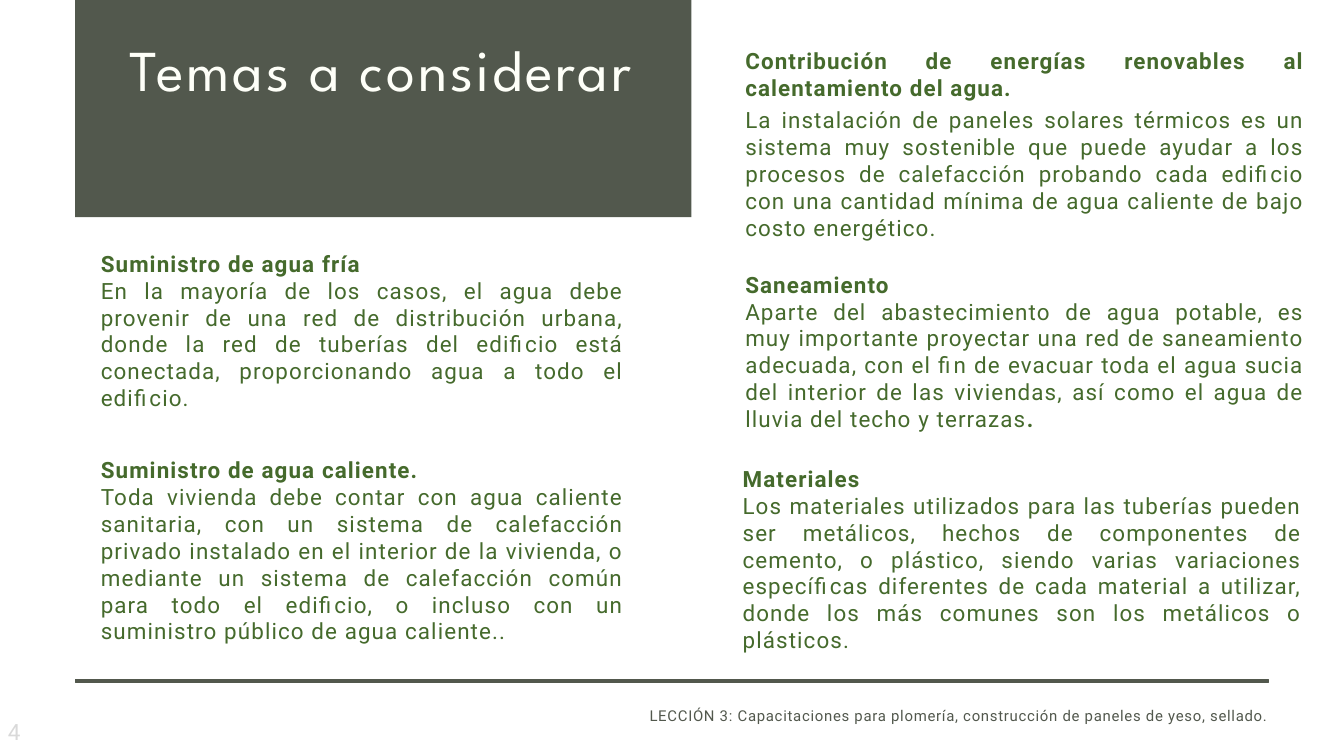
"""Builds the lesson slide on topics to consider in plumbing."""
from pptx import Presentation
from pptx.dml.color import RGBColor
from pptx.enum.shapes import MSO_SHAPE
from pptx.enum.text import MSO_ANCHOR, MSO_AUTO_SIZE, PP_ALIGN
from pptx.util import Cm, Pt

OLIVE = RGBColor(0x52, 0x58, 0x4D)
GREEN = RGBColor(0x45, 0x6A, 0x2C)
IVORY = RGBColor(0xFE, 0xFF, 0xF8)
GREY = RGBColor(0xD9, 0xD9, 0xD9)
RECTANGLE = MSO_SHAPE.RECTANGLE
TOP, MIDDLE = MSO_ANCHOR.TOP, MSO_ANCHOR.MIDDLE
LEFT, RIGHT, JUSTIFY = PP_ALIGN.LEFT, PP_ALIGN.RIGHT, PP_ALIGN.JUSTIFY
NO_FIT = MSO_AUTO_SIZE.NONE
TITLE_ONLY = 5

TOPICS = [
    ((28.17, 1.78, 21.13, 7.39), 6,
     "Contribución de energías renovables al calentamiento del agua.",
     "La instalación de paneles solares térmicos es un sistema muy sostenible que puede ayudar "
     "a los procesos de calefacción probando cada edificio con una cantidad mínima de agua "
     "caliente de bajo costo energético.", ""),
    ((28.17, 10.24, 21.13, 6.15), 0,
     "Saneamiento",
     "Aparte del abastecimiento de agua potable, es muy importante proyectar una red de "
     "saneamiento adecuada, con el fin de evacuar toda el agua sucia del interior de las "
     "viviendas, así como el agua de lluvia del techo y terrazas", "."),
    ((3.81, 9.45, 19.76, 6.15), 0,
     "Suministro de agua fría",
     "En la mayoría de los casos, el agua debe provenir de una red de distribución urbana, "
     "donde la red de tuberías del edificio está conectada, proporcionando agua a todo el "
     "edificio.", ""),
    ((3.81, 17.25, 19.76, 7.19), 0,
     "Suministro de agua caliente.",
     "Toda vivienda debe contar con agua caliente sanitaria, con un sistema de calefacción "
     "privado instalado en el interior de la vivienda, o mediante un sistema de calefacción "
     "común para todo el edificio, o incluso con un suministro público de agua caliente..", ""),
    ((28.07, 17.58, 21.13, 6.15), 0,
     "Materiales",
     "Los materiales utilizados para las tuberías pueden ser metálicos, hechos de componentes "
     "de cemento, o plástico, siendo varias variaciones específicas diferentes de cada material "
     "a utilizar, donde los más comunes son los metálicos o plásticos.", ""),
]


class SlideWriter:
    """Holds the text style and the current slide."""

    body_font = "Roboto"
    title_font = "League Spartan"
    body_size = 24

    def __init__(self, page):
        self.page = page

    def frame(self, box, anchor=TOP, margins=(0, 0)):
        side, edge = (Cm(margin) for margin in margins)
        settings = {
            "word_wrap": True, "auto_size": NO_FIT, "vertical_anchor": anchor,
            "margin_left": side, "margin_right": side,
            "margin_top": edge, "margin_bottom": edge,
        }
        for name, value in settings.items():
            setattr(box.text_frame, name, value)
        return box.text_frame

    def paragraph(self, para, spans, color, size=body_size, font=body_font, tracking=1.2, **layout):
        for name, value in layout.items():
            setattr(para, name, value)
        for text, bold in spans:
            span = para.add_run()
            span.text = text
            for name, value in {"name": font, "size": Pt(size), "bold": bold}.items():
                setattr(span.font, name, value)
            span.font.color.rgb = color
            span._r.get_or_add_rPr().set("spc", str(round(tracking * 100)))

    def bar(self, area, outline=None):
        box = self.page.shapes.add_shape(RECTANGLE, *map(Cm, area))
        box.shadow.inherit = False
        box.fill.solid()
        box.fill.fore_color.rgb = OLIVE
        if outline:
            box.line.color.rgb = OLIVE
            box.line.width = Pt(outline)
        else:
            box.line.fill.background()

    def title(self, area, text):
        box = self.page.shapes.title
        for name, value in zip(("left", "top", "width", "height"), area):
            setattr(box, name, Cm(value))
        box.element.getparent().append(box.element)
        self.paragraph(self.frame(box).paragraphs[0], [(text, False)], IVORY, 62,
                       self.title_font, 3.1, alignment=LEFT, line_spacing=Pt(83.7))

    def label(self, area, text, color, anchor=TOP, margins=(0, 0), **style):
        box = self.page.shapes.add_textbox(*map(Cm, area))
        frame = self.frame(box, anchor, margins)
        self.paragraph(frame.paragraphs[0], [(text, False)], color, **style)

    def topic(self, area, gap, heading, text, ending):
        frame = self.frame(self.page.shapes.add_textbox(*map(Cm, area)))
        layout = {"alignment": JUSTIFY, "space_after": Pt(gap)}
        body = [(text, False)] + ([(ending, True)] if ending else [])
        self.paragraph(frame.paragraphs[0], [(heading, True)], GREEN, **layout)
        self.paragraph(frame.add_paragraph(), body, GREEN, **layout)


def main():
    deck = Presentation()
    deck.slide_width, deck.slide_height = Cm(50.8), Cm(28.58)
    writer = SlideWriter(deck.slides.add_slide(deck.slide_layouts[TITLE_ONLY]))
    writer.bar((2.84, -0.86, 23.29, 9.07))
    writer.title((4.9, 0.94, 19.2, 5.89), "Temas a considerar")
    writer.bar((2.84, 25.7, 45.09, 0.1), outline=0.75)
    for topic in TOPICS:
        writer.topic(*topic)
    writer.label((0.05, 27.15, 5.92, 1.02), "4", GREY, MIDDLE, (0.25, 0.13))
    writer.label((24.1, 26.59, 23.85, 0.74),
                 "LECCIÓN 3: Capacitaciones para plomería, construcción de paneles de yeso, sellado.",
                 OLIVE, size=16, tracking=0.8, alignment=RIGHT, line_spacing=Pt(22.4))
    deck.save("out.pptx")


if __name__ == "__main__":
    main()
